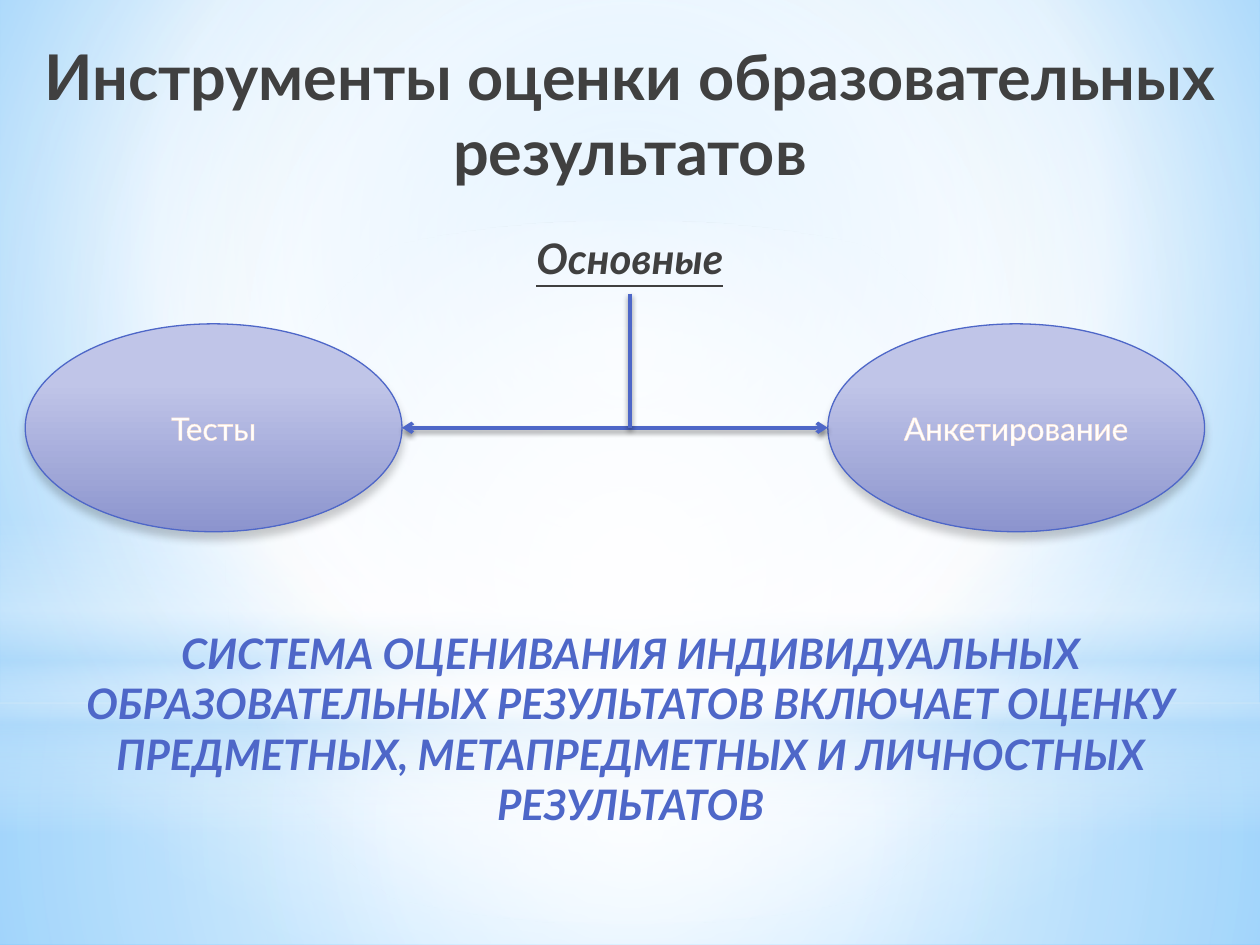
from lxml.etree import SubElement as Sub
from pptx import Presentation
from pptx.dml.color import RGBColor
from pptx.enum.shapes import MSO_CONNECTOR as Connector, MSO_SHAPE as Shape
from pptx.enum.text import MSO_ANCHOR as Anchor, PP_ALIGN as Align
from pptx.oxml.ns import qn
from pptx.util import Inches, Pt

WHITE = RGBColor(0xFF, 0xFF, 0xFF)
BLACK = RGBColor(0x00, 0x00, 0x00)
DARK = RGBColor(0x40, 0x40, 0x40)
BLUE = RGBColor(0x4E, 0x67, 0xC8)
PALE_BLUE = RGBColor(0xB4, 0xDC, 0xFA)
SKY = RGBColor(0x9E, 0xD5, 0xFF)
DEEP_SKY = RGBColor(0x5B, 0xB9, 0xFF)
LILAC = RGBColor(0xC0, 0xC5, 0xE8)
VIOLET = RGBColor(0x8C, 0x94, 0xCE)
CREAM = RGBColor(0xFF, 0xE6, 0xD3)

FONT = "Lato"
CENTRE = (50, 50, 50, 50)


# Formatting helpers
def add_colour(parent, colour, alpha=100):
    element = Sub(parent, qn("a:srgbClr"), val=str(colour))
    if alpha < 100:
        Sub(element, qn("a:alpha"), val=str(alpha * 1000))


def set_gradient(fill, parent, stops, focus=None):
    """Radial gradient round the focus insets, or a vertical one without focus."""
    fill.solid()
    solid = parent.find(qn("a:solidFill"))
    gradient = Sub(parent, qn("a:gradFill"), rotWithShape="1")
    parent.replace(solid, gradient)
    stop_list = Sub(gradient, qn("a:gsLst"))
    for position, colour, *alpha in stops:
        stop = Sub(stop_list, qn("a:gs"), pos=str(position * 1000))
        add_colour(stop, colour, *alpha)
    if focus:
        route = Sub(gradient, qn("a:path"))
        route.set("path", "circle")
        insets = {side: str(inset * 1000) for side, inset in zip("ltrb", focus)}
        Sub(route, qn("a:fillToRect"), **insets)
    else:
        Sub(gradient, qn("a:lin"), ang="5400000", scaled="0")


def add_shadow(properties, alpha, blur, distance):
    effects = Sub(properties, qn("a:effectLst"))
    shadow = Sub(effects, qn("a:outerShdw"), blurRad=str(Pt(blur)),
                 dist=str(Pt(distance)), dir="5400000", rotWithShape="0")
    add_colour(shadow, BLACK, alpha)


def write_text(shape, text, colour, anchor=Anchor.TOP, spacing=0, **font_format):
    frame = shape.text_frame
    frame.word_wrap = True
    frame.vertical_anchor = anchor
    paragraph = frame.paragraphs[0]
    paragraph.alignment = Align.CENTER
    paragraph.space_before = paragraph.space_after = Pt(spacing)
    run = paragraph.add_run()
    run.text = text
    run.font.color.rgb = colour
    for name, value in {"name": FONT, **font_format}.items():
        setattr(run.font, name, value)
    return run


def add_text(slide, box, text, colour, **options):
    write_text(slide.shapes.add_textbox(*map(Inches, box)), text, colour, **options)


# Backdrop: page gradient and translucent layers
def add_backdrop(slide, box):
    left, top, width, height = box
    fill = slide.background.fill
    fill.solid()
    properties = slide.element.find(".//" + qn("p:bgPr"))
    set_gradient(fill, properties,
                 [(0, SKY), (60, WHITE), (100, DEEP_SKY)], (20, 10, 20, 60))
    horizon = 5.58
    layers = [
        (Shape.RECTANGLE, horizon, height - horizon, CENTRE,
         [(0, WHITE, 91), (37, WHITE, 76), (100, PALE_BLUE, 79)]),
        (Shape.RECTANGLE, 0, horizon, CENTRE,
         [(0, WHITE, 89), (48, WHITE, 62), (100, PALE_BLUE, 79)]),
        (Shape.RECTANGLE, 4.12, 2.5, None,
         [(0, WHITE, 0), (29, WHITE, 30), (45, PALE_BLUE, 40),
          (55, WHITE, 26), (65, PALE_BLUE, 60), (100, WHITE, 0)]),
        (Shape.OVAL, 1.75, horizon, CENTRE, [(0, WHITE), (56, WHITE, 0)]),
    ]
    for kind, offset, depth, focus, stops in layers:
        layer = slide.shapes.add_shape(
            kind, *map(Inches, (left, top + offset, width, depth)))
        layer.shadow.inherit = False
        layer.line.fill.background()
        set_gradient(layer.fill, layer.element.spPr, stops, focus)


# Diagram: two ovals joined under the heading
def add_oval(slide, box, text):
    oval = slide.shapes.add_shape(Shape.OVAL, *map(Inches, box))
    oval.line.color.rgb = BLUE
    oval.line.width = Pt(0.75)
    properties = oval.element.spPr
    set_gradient(oval.fill, properties, [(28, LILAC), (100, VIOLET)])
    add_shadow(properties, 20, 5, 4)
    run = write_text(oval, text, WHITE, anchor=Anchor.MIDDLE, size=Pt(18))
    # Cream outline round the letters
    run_properties = run.font.fill._xPr
    outline = Sub(run_properties, qn("a:ln"), w=str(Pt(1.45)))
    add_colour(Sub(outline, qn("a:solidFill")), CREAM)
    run_properties.insert(0, outline)


def add_line(slide, start, end, arrows=False):
    line = slide.shapes.add_connector(
        Connector.STRAIGHT, *map(Inches, (*start, *end)))
    line.line.color.rgb = BLUE
    line.line.width = Pt(2)
    if arrows:
        for tag in ("a:headEnd", "a:tailEnd"):
            Sub(line.line._get_or_add_ln(), qn(tag), type="arrow")
    add_shadow(line.element.spPr, 45, 3.1, 1.8)


def add_diagram(slide, box):
    left, top, width, height = box
    oval_width, oval_height = 2.99, 1.65
    heading_height = 0.53
    oval_top = top + height - oval_height
    middle = oval_top + oval_height / 2
    left_oval, right_oval = left + 0.2, left + 6.57
    add_text(slide, (left, top, width, heading_height), "Основные", DARK,
             spacing=0.2, size=Pt(24), bold=True, italic=True, underline=True)
    for oval_left, text in ((right_oval, "Анкетирование"), (left_oval, "Тесты")):
        add_oval(slide, (oval_left, oval_top, oval_width, oval_height), text)
    add_line(slide, (left_oval + oval_width, middle), (right_oval, middle), True)
    centre = left + width / 2
    add_line(slide, (centre, top + heading_height), (centre, middle))


def main():
    presentation = Presentation()
    presentation.slide_width = Inches(10)
    presentation.slide_height = Inches(7.5)
    slide = presentation.slides.add_slide(presentation.slide_layouts[6])
    add_backdrop(slide, (0, 0, 10, 7.5))
    add_text(slide, (0, 0.2, 10, 1.39),
             "Инструменты оценки образовательных результатов", DARK,
             anchor=Anchor.MIDDLE, size=Pt(36), bold=True)
    add_diagram(slide, (0, 1.8, 10, 2.42))
    add_text(slide, (0.13, 4.93, 9.75, 1.43),
             "СИСТЕМА ОЦЕНИВАНИЯ ИНДИВИДУАЛЬНЫХ ОБРАЗОВАТЕЛЬНЫХ РЕЗУЛЬТАТОВ "
             "ВКЛЮЧАЕТ ОЦЕНКУ ПРЕДМЕТНЫХ, МЕТАПРЕДМЕТНЫХ И ЛИЧНОСТНЫХ РЕЗУЛЬТАТОВ",
             BLUE, size=Pt(24), bold=True, italic=True)
    presentation.save("out.pptx")


if __name__ == "__main__":
    main()
